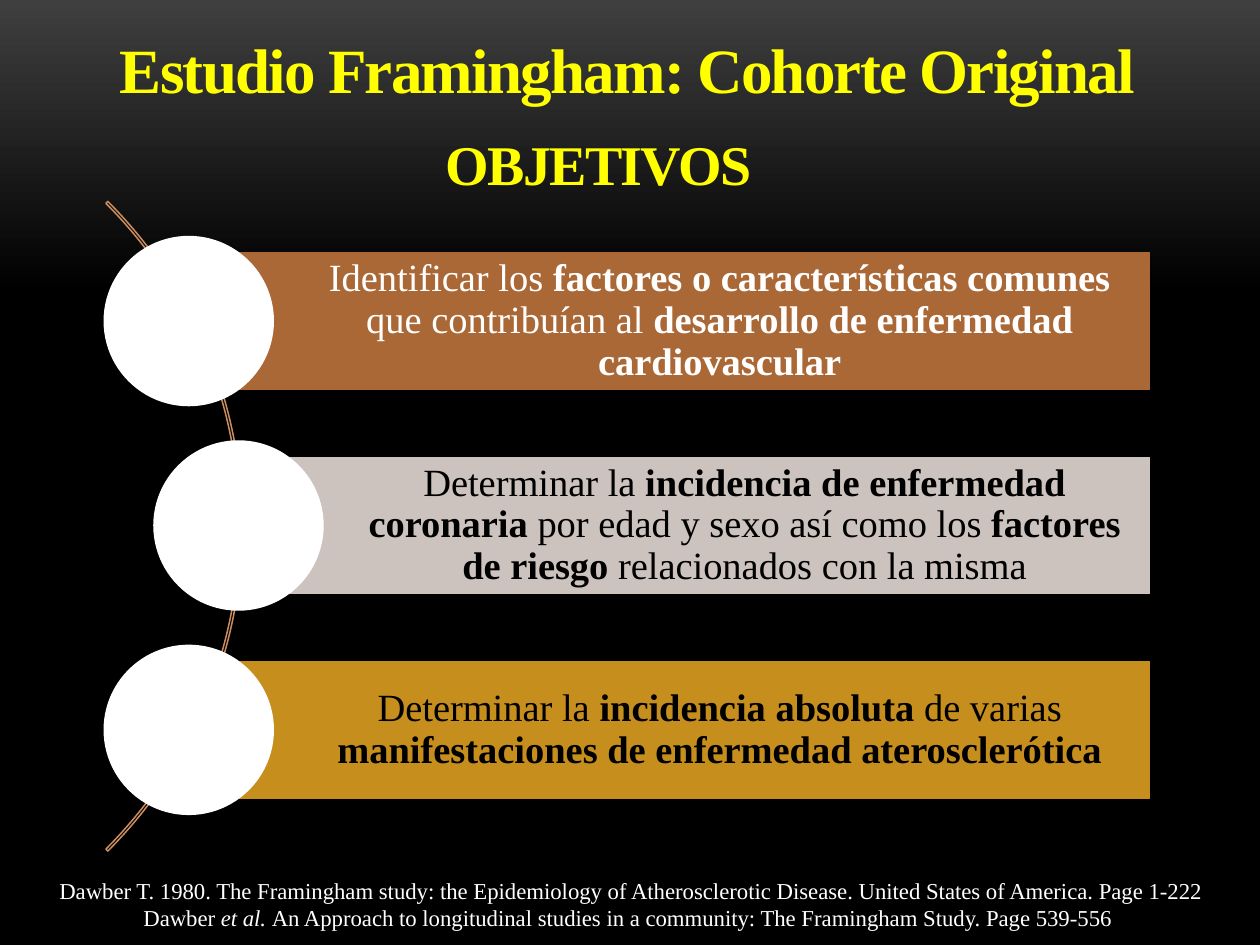
from pptx import Presentation
from pptx.dml.color import RGBColor
from pptx.enum.shapes import MSO_SHAPE as SHAPE
from pptx.enum.text import MSO_ANCHOR as ANCHOR, MSO_AUTO_SIZE as AUTO, PP_ALIGN as ALIGN
from pptx.util import Pt

FONT = "Times New Roman"
YELLOW, WHITE, BLACK = "FFFF00", "FFFFFF", "000000"
BAR_H, CIRCLE_D, PITCH = 78, 97.4, 116.8
GOALS = [  # bar colour, text colour, indent, runs alternating plain and bold
    ("AA6837", WHITE, 0, ["Identificar los ", "factores o características comunes ",
                          "que contribuían al ", "desarrollo de enfermedad cardiovascular"]),
    ("CCC3BE", BLACK, 28.4, ["Determinar la ", "incidencia de enfermedad coronaria ",
                             "por edad y sexo así como los ", "factores de riesgo ",
                             "relacionados con la misma"]),
    ("C68E1C", BLACK, 0, ["Determinar la ", "incidencia absoluta ", "de varias ",
                          "manifestaciones de enfermedad aterosclerótica"]),
]
SOURCES = [
    ["Dawber T. 1980. The Framingham study: the Epidemiology of Atherosclerotic Disease. "
     "United States of America. Page 1-222"],
    ["Dawber ", "et al. ",
     "An Approach to longitudinal studies in a community: The Framingham Study. Page 539-556 "],
]


def rgb(value):
    return RGBColor.from_string(value)


def set_attrs(obj, **values):
    for name, value in values.items():
        setattr(obj, name, value)


def add_runs(p, texts, size, color, emphasis="bold"):
    """Fill a centred paragraph; every second run gets the emphasis."""
    p.alignment = ALIGN.CENTER
    for i, text in enumerate(texts):
        r = p.add_run()
        r.text = text
        set_attrs(r.font, name=FONT, size=Pt(size), **{emphasis: i % 2 == 1})
        r.font.color.rgb = rgb(color)


def add_shape(slide, kind, x, y, w, h, fill=None, line=None, width=0.75):
    s = slide.shapes.add_shape(kind, Pt(x), Pt(y), Pt(w), Pt(h))
    s.shadow.inherit = False
    if fill:
        s.fill.solid()
        s.fill.fore_color.rgb = rgb(fill)
    else:
        s.fill.background()
    if line:
        s.line.color.rgb = rgb(line)
        s.line.width = Pt(width)
    else:
        s.line.fill.background()
    return s


def format_heading(s, text, size, x, y, w, h):
    set_attrs(s, left=Pt(x), top=Pt(y), width=Pt(w), height=Pt(h))
    tf = s.text_frame
    set_attrs(tf, word_wrap=True, auto_size=AUTO.NONE, vertical_anchor=ANCHOR.TOP,
              margin_top=Pt(8), margin_bottom=Pt(0))
    p = tf.paragraphs[0]
    add_runs(p, [text], size, YELLOW)
    r = p.runs[0]
    r.font.bold = True
    r.font._element.set("spc", "-100")


def add_goal(slide, x, y, right, fill, color, texts):
    """Bar with a circle centred on its left edge, circle's box starting at x, y."""
    bar_x = x + CIRCLE_D / 2
    bar = add_shape(slide, SHAPE.RECTANGLE, bar_x, y + (CIRCLE_D - BAR_H) / 2,
                    right - bar_x, BAR_H, fill, fill)
    tf = bar.text_frame
    set_attrs(tf, word_wrap=True, vertical_anchor=ANCHOR.MIDDLE, margin_left=Pt(61.9),
              margin_right=Pt(4.3), margin_top=Pt(4.3), margin_bottom=Pt(4.3))
    p = tf.paragraphs[0]
    p.line_spacing = 0.9
    add_runs(p, texts, 22, color)
    add_shape(slide, SHAPE.OVAL, x, y, CIRCLE_D, CIRCLE_D, WHITE)


def add_goals(slide, x, y, right):
    arc = add_shape(slide, SHAPE.BLOCK_ARC, x - 445.7, y - 96.6, 525, 525,
                    line="CC8E60", width=0.85)
    for i, value in enumerate((189, 27, 0.003)):
        arc.adjustments[i] = value
    for i, (fill, color, indent, texts) in enumerate(GOALS):
        add_goal(slide, x + indent, y + i * PITCH, right, fill, color, texts)


def add_sources(slide, x, y, w, h):
    tf = slide.shapes.add_textbox(Pt(x), Pt(y), Pt(w), Pt(h)).text_frame
    tf.word_wrap = True
    for i, texts in enumerate(SOURCES):
        p = tf.add_paragraph() if i else tf.paragraphs[0]
        add_runs(p, texts, 13, WHITE, "italic")


def set_background(slide):
    fill = slide.background.fill
    fill.gradient()
    fill.gradient_angle = 270
    for stop, position, color in zip(fill.gradient_stops, (0, 0.31), ("3F3F3F", BLACK)):
        stop.position = position
        stop.color.rgb = rgb(color)


def main():
    prs = Presentation()
    set_attrs(prs, slide_width=Pt(720), slide_height=Pt(540))
    slide = prs.slides.add_slide(prs.slide_layouts[5])
    set_background(slide)
    add_goals(slide, 59.2, 134.8, 657)
    format_heading(slide.shapes.title, "Estudio Framingham: Cohorte Original", 36,
                   8.6, 9.4, 700, 62.6)
    subtitle = slide.shapes.add_textbox(0, 0, 0, 0)
    format_heading(subtitle, "OBJETIVOS", 32, 201.6, 66.2, 280.8, 48.2)
    add_sources(slide, 0, 497.5, 720, 38.9)
    prs.save("out.pptx")


if __name__ == "__main__":
    main()
